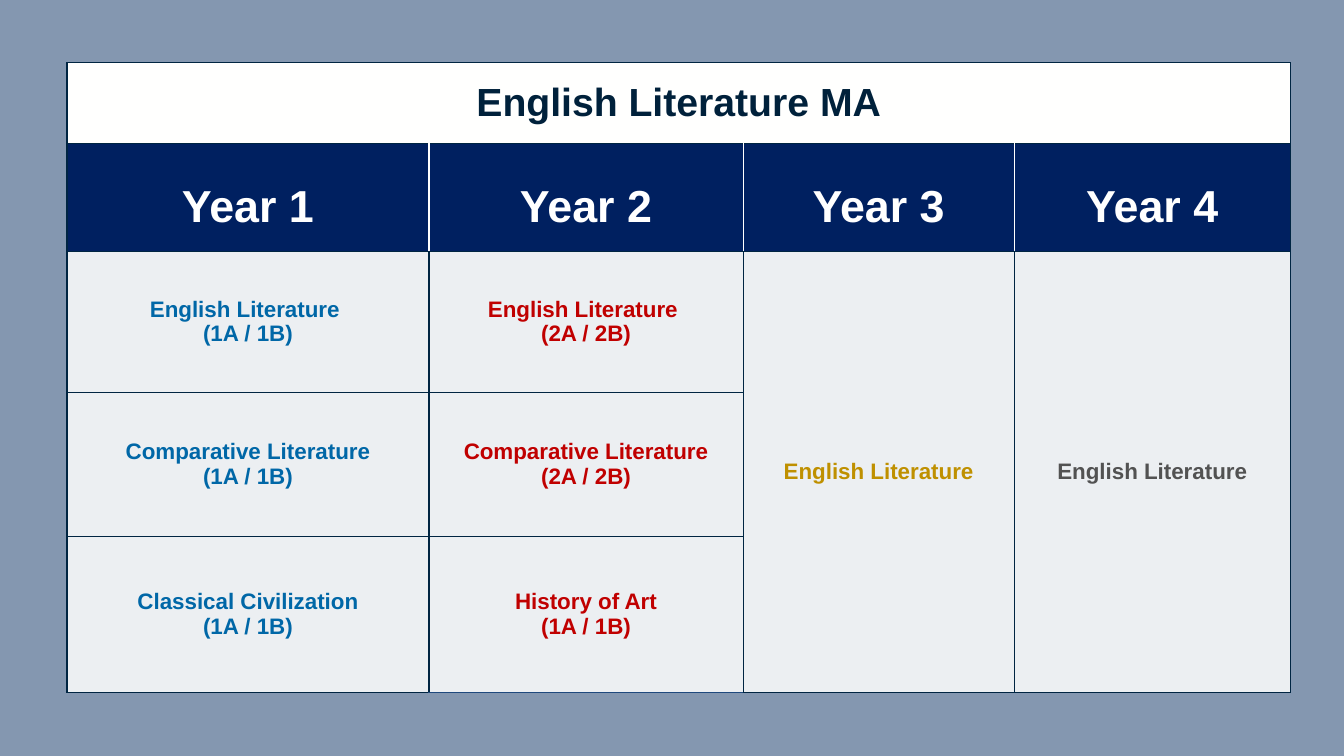
from lxml.etree import SubElement
from pptx import Presentation
from pptx.dml.color import RGBColor
from pptx.enum.text import MSO_ANCHOR, PP_ALIGN
from pptx.oxml import parse_xml
from pptx.oxml.ns import qn
from pptx.util import Cm, Pt

# Content
TITLE = "English Literature MA"
YEARS = ["Year 1", "Year 2", "Year 3", "Year 4"]
# One list per year; a year with a single course fills the whole column.
# The first course keeps its trailing space before the line break.
COURSES = [
    [("English Literature ", "(1A / 1B)"),
     ("Comparative Literature", "(1A / 1B)"),
     ("Classical Civilization", "(1A / 1B)")],
    [("English Literature ", "(2A / 2B)"),
     ("Comparative Literature", "(2A / 2B)"),
     ("History of Art", "(1A / 1B)")],
    [("English Literature",)],
    [("English Literature",)],
]
YEAR_COLORS = ["0067A7", "C00000", "BF9000", "525252"]

# Layout in centimetres
LEFT, TOP = 1.69, 1.58
COLUMN_WIDTHS = [9.12, 7.92, 6.83, 6.96]
ROW_HEIGHTS = [2.03, 2.72, 3.56, 3.63, 3.94]
FIRST_COURSE_ROW = 2

# Colours
BACKGROUND, WHITE = "8497B0", "FFFFFF"
PAPER, HEADER, TITLE_TEXT = "FFFFFE", "002060", "00213B"
DARK_LINE, BLUE_LINE = "002542", "1F497D"

DRAWING = "http://schemas.openxmlformats.org/drawingml/2006/main"


def color(hex_string):
    return RGBColor.from_string(hex_string)


def write_text(cell, lines, size, text_color, line_spacing=None):
    cell.vertical_anchor = MSO_ANCHOR.MIDDLE
    cell.margin_left = cell.margin_right = Cm(0.3)
    cell.margin_top = cell.margin_bottom = Cm(0.15)
    frame = cell.text_frame
    for index, line in enumerate(lines):
        paragraph = frame.paragraphs[0] if index == 0 else frame.add_paragraph()
        paragraph.alignment = PP_ALIGN.CENTER
        if line_spacing:
            paragraph.line_spacing = line_spacing
        run = paragraph.add_run()
        run.text = line
        run.font.name = "Arial"
        run.font.size = Pt(size)
        run.font.bold = True
        run.font.color.rgb = color(text_color)


def fill_cell(cell, fill_color, opacity=100):
    cell.fill.solid()
    cell.fill.fore_color.rgb = color(fill_color)
    if opacity < 100:
        color_element = cell._tc.tcPr.find(qn("a:solidFill"))[0]
        SubElement(color_element, qn("a:alpha")).set("val", str(opacity * 1000))


def set_borders(cell, left=DARK_LINE, right=DARK_LINE, top=DARK_LINE, bottom=DARK_LINE):
    sides = {"lnL": left, "lnR": right, "lnT": top, "lnB": bottom}
    for position, (tag, line_color) in enumerate(sides.items()):
        border = parse_xml(
            f'<a:{tag} xmlns:a="{DRAWING}" w="{Pt(1)}"><a:solidFill>'
            f'<a:srgbClr val="{line_color}"/></a:solidFill></a:{tag}>')
        cell._tc.get_or_add_tcPr().insert(position, border)


# Slide
presentation = Presentation()
presentation.slide_width, presentation.slide_height = Cm(33.87), Cm(19.05)
slide = presentation.slides.add_slide(presentation.slide_layouts[6])
slide.background.fill.solid()
slide.background.fill.fore_color.rgb = color(BACKGROUND)

# Table grid
row_count, column_count = len(ROW_HEIGHTS), len(COLUMN_WIDTHS)
last_row, last_column = row_count - 1, column_count - 1
table = slide.shapes.add_table(
    row_count, column_count, Cm(LEFT), Cm(TOP),
    Cm(sum(COLUMN_WIDTHS)), Cm(sum(ROW_HEIGHTS))).table
table.horz_banding = False
for column, width in zip(table.columns, COLUMN_WIDTHS):
    column.width = Cm(width)
for row, height in zip(table.rows, ROW_HEIGHTS):
    row.height = Cm(height)

# Fills and borders
for column in range(column_count):
    title_cell, year_cell = table.cell(0, column), table.cell(1, column)
    fill_cell(title_cell, PAPER)
    set_borders(title_cell)
    fill_cell(year_cell, HEADER)
    set_borders(year_cell,
                left=PAPER if column > 0 else DARK_LINE,
                right=PAPER if column < last_column else DARK_LINE)
    for row in range(FIRST_COURSE_ROW, row_count):
        course_cell = table.cell(row, column)
        fill_cell(course_cell, PAPER, opacity=85)
        set_borders(course_cell, bottom=BLUE_LINE if column == 1 else DARK_LINE)

# Title and years
table.cell(0, 0).merge(table.cell(0, last_column))
write_text(table.cell(0, 0), [TITLE], 28, TITLE_TEXT)
for column, year in enumerate(YEARS):
    write_text(table.cell(1, column), [year], 32, WHITE, line_spacing=1.4)

# Courses
for column, (courses, text_color) in enumerate(zip(COURSES, YEAR_COLORS)):
    if len(courses) == 1:
        table.cell(FIRST_COURSE_ROW, column).merge(table.cell(last_row, column))
    for row, lines in enumerate(courses, FIRST_COURSE_ROW):
        write_text(table.cell(row, column), lines, 16, text_color)

presentation.save("out.pptx")
